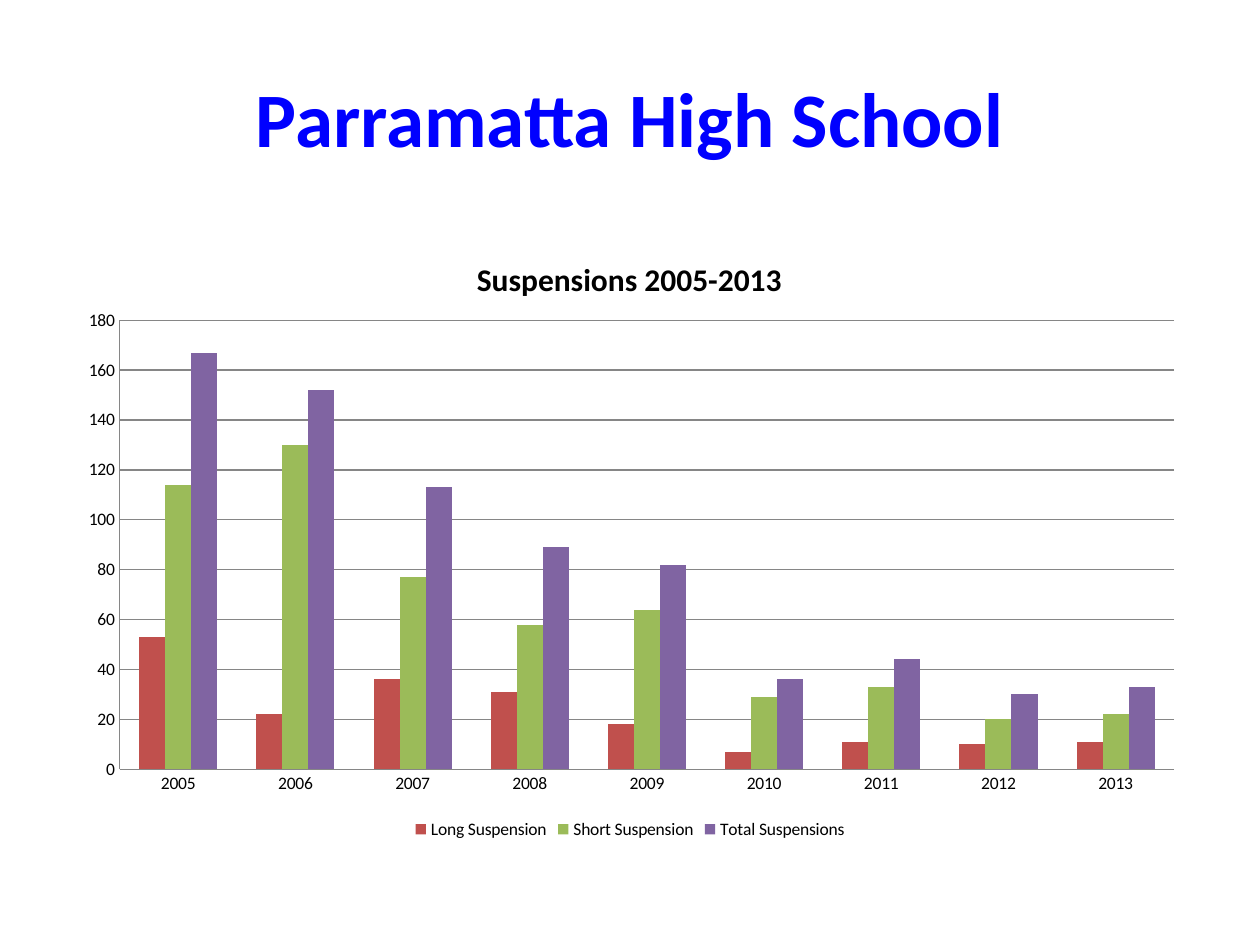
from lxml.etree import SubElement
from pptx import Presentation
from pptx.chart.data import CategoryChartData
from pptx.dml.color import RGBColor
from pptx.enum.chart import XL_CHART_TYPE as ChartType, XL_LEGEND_POSITION as LegendPos, XL_TICK_MARK as Tick
from pptx.enum.text import MSO_ANCHOR as Anchor, PP_ALIGN as Align
from pptx.oxml import parse_xml
from pptx.oxml.ns import nsdecls, qn
from pptx.util import Inches, Pt


def style(font, size, color, bold=False):
    font.name = "Calibri"
    font.size = Pt(size)
    font.bold = bold
    font.color.rgb = RGBColor.from_string(color)


def place(element, index, **shares):
    for old in element.findall(qn("c:layout")):
        element.remove(old)
    layout = parse_xml(f"<c:layout {nsdecls('c')}><c:manualLayout/></c:layout>")
    for tag, value in shares.items():
        SubElement(layout[0], qn(f"c:{tag}")).set("val", str(value))
    element.insert(index, layout)


prs = Presentation()
prs.slide_width, prs.slide_height = Inches(10), Inches(7.5)
W, H = prs.slide_width, prs.slide_height
margin, content_width = int(W * 0.05), int(W * 0.9)

slide = prs.slides.add_slide(prs.slide_layouts[5])
school = slide.shapes.title
school.left, school.top = margin, int(H * 0.04)
school.width, school.height = content_width, Inches(1.25)
school.text_frame.text = "Parramatta High School"
school.text_frame.vertical_anchor = Anchor.MIDDLE
heading = school.text_frame.paragraphs[0]
heading.alignment = Align.CENTER
style(heading.font, 44, "0000FF", True)

suspensions = [
    ("Long Suspension", "C0504D", (53, 22, 36, 31, 18, 7, 11, 10, 11)),
    ("Short Suspension", "9BBB59", (114, 130, 77, 58, 64, 29, 33, 20, 22)),
    ("Total Suspensions", "8064A2", (167, 152, 113, 89, 82, 36, 44, 30, 33)),
]
counts = CategoryChartData(number_format="General")
counts.categories = [str(year) for year in range(2005, 2014)]
for kind, color, values in suspensions:
    counts.add_series(kind, values)

chart = slide.shapes.add_chart(
    ChartType.COLUMN_CLUSTERED, margin, Inches(1.75), content_width, int(H * 0.66), counts
).chart
style(chart.font, 10, "000000")

chart.has_title = True
chart.chart_title.include_in_layout = False
chart.chart_title.text_frame.text = "Suspensions 2005-2013"
style(chart.chart_title.text_frame.paragraphs[0].font, 18, "000000", True)

chart.has_legend = True
chart.legend.position = LegendPos.BOTTOM
chart.legend.include_in_layout = False

bars = chart.plots[0]
bars.gap_width = 150
bars.overlap = 0
bars.vary_by_categories = False
for bar, (kind, color, values) in zip(bars.series, suspensions):
    bar.format.fill.solid()
    bar.format.fill.fore_color.rgb = RGBColor.from_string(color)

years, scale = chart.category_axis, chart.value_axis
scale.minimum_scale, scale.maximum_scale, scale.major_unit = 0, 180, 20
scale.has_major_gridlines = True
for axis in (years, scale):
    axis.major_tick_mark = axis.minor_tick_mark = Tick.NONE
for rule in (years, scale, scale.major_gridlines):
    rule.format.line.width = Pt(0.75)
    rule.format.line.color.rgb = RGBColor.from_string("868686")

place(chart.chart_title._element, 1, xMode="edge", yMode="edge", x=0.36, y=0.05)
place(chart._chartSpace.chart.plotArea, 0, layoutTarget="inner", xMode="edge", yMode="edge",
      x=0.05, y=0.16, w=0.93, h=0.72)

prs.save("out.pptx")
